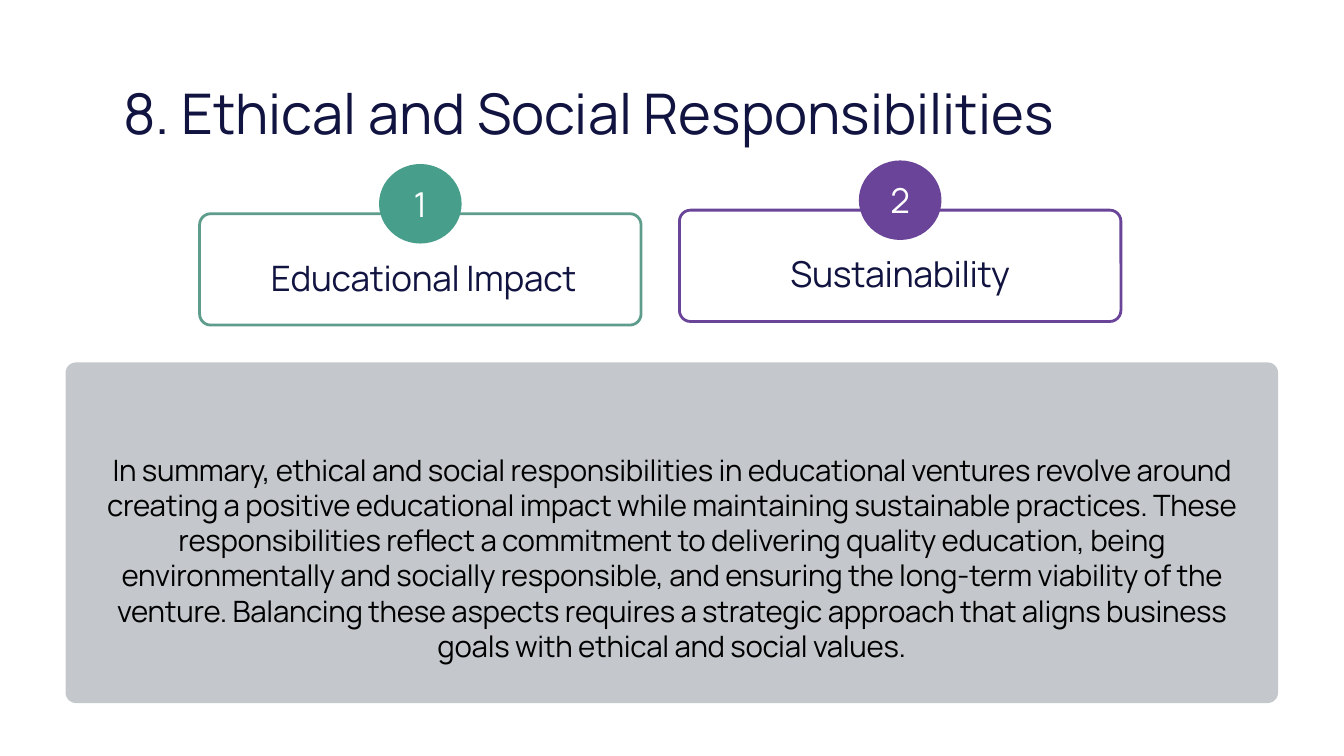
from dataclasses import dataclass

from pptx import Presentation
from pptx.dml.color import RGBColor
from pptx.enum.shapes import MSO_SHAPE
from pptx.enum.text import MSO_ANCHOR, MSO_AUTO_SIZE, PP_ALIGN
from pptx.util import Pt


@dataclass(frozen=True)
class Theme:
    font: str = "Manrope"
    ink: str = "111340"
    black: str = "000000"
    white: str = "FFFFFF"
    panel: str = "C4C8CD"
    green: str = "479E8B"
    green_line: str = "5E9C8C"
    purple: str = "694498"
    title_size: int = 80
    number_size: int = 49
    body_size: int = 42
    line_width: int = 4


class SlideBuilder:
    def __init__(self, page, theme):
        self.page = page
        self.theme = theme

    def shape(self, kind, left, top, width, height, fill=None, line=None, corner=None):
        shape = self.page.shapes.add_shape(kind, Pt(left), Pt(top), Pt(width), Pt(height))
        shape.shadow.inherit = False
        if corner is not None:
            shape.adjustments[0] = corner
        if fill:
            shape.fill.solid()
            shape.fill.fore_color.rgb = RGBColor.from_string(fill)
        else:
            shape.fill.background()
        if line:
            shape.line.color.rgb = RGBColor.from_string(line)
            shape.line.width = Pt(self.theme.line_width)
        else:
            shape.line.fill.background()

    def text(self, words, left, top, width, height, size, color,
             align=PP_ALIGN.CENTER, anchor=MSO_ANCHOR.BOTTOM, spacing=-0.5):
        box = self.page.shapes.add_textbox(Pt(left), Pt(top), Pt(width), Pt(height))
        frame = box.text_frame
        frame.word_wrap = True
        frame.auto_size = MSO_AUTO_SIZE.SHAPE_TO_FIT_TEXT
        frame.vertical_anchor = anchor
        frame.margin_left = frame.margin_right = Pt(3.6)
        frame.margin_top = frame.margin_bottom = Pt(3.6)
        paragraph = frame.paragraphs[0]
        paragraph.alignment = align
        paragraph.font.name = self.theme.font
        paragraph.font.size = Pt(size)
        paragraph.font.color.rgb = RGBColor.from_string(color)
        span = paragraph.add_run()
        span.text = words
        # Letter spacing is stored in hundredths of a point
        span._r.get_or_add_rPr().set("spc", str(round(spacing * 100)))

    def card(self, number, label, left, top, line, badge, label_width, label_size, spacing):
        width, height = 630.7, 159.1
        center = left + width / 2
        self.shape(MSO_SHAPE.ROUNDED_RECTANGLE, left, top, width, height,
                   line=line, corner=0.1)
        # Numbered badge on the top edge
        self.shape(MSO_SHAPE.OVAL, center - 59, top - 71, 118, 113.6, fill=badge)
        self.text(number, center - 50.4, top - 52, 100.8, 75.6,
                  self.theme.number_size, self.theme.white, anchor=MSO_ANCHOR.MIDDLE)
        self.text(label, center - label_width / 2, top + 46, label_width, 78.8,
                  label_size, self.theme.ink, spacing=spacing)


def main():
    theme = Theme()
    deck = Presentation()
    deck.slide_width, deck.slide_height = Pt(1920), Pt(1080)
    page = deck.slides.add_slide(deck.slide_layouts[6])
    builder = SlideBuilder(page, theme)

    # Summary panel
    builder.shape(MSO_SHAPE.ROUNDED_RECTANGLE, 93.6, 517.7, 1732.3, 486.7,
                  fill=theme.panel, corner=0.031)

    # Title
    builder.text(" 8. Ethical and Social Responsibilities", 156.2, 92.2, 1777.7, 119.5,
                 theme.title_size, theme.ink, align=PP_ALIGN.LEFT, spacing=0.1)

    # Numbered cards
    builder.card("1", " Educational Impact", 285.1, 305.3,
                 theme.green_line, theme.green, 610.6, 50, -0.4)
    builder.card("2", "Sustainability", 970.6, 300.2,
                 theme.purple, theme.purple, 702.7, 51, -0.5)

    # Summary text
    builder.text(
        "In summary, ethical and social responsibilities in educational ventures revolve "
        "around creating a positive educational impact while maintaining sustainable "
        "practices. These responsibilities reflect a commitment to delivering quality "
        "education, being environmentally and socially responsible, and ensuring the "
        "long-term viability of the venture. Balancing these aspects requires a strategic "
        "approach that aligns business goals with ethical and social values.",
        135.4, 570.2, 1648.8, 380.9, theme.body_size, theme.black, spacing=-0.4)

    deck.save("out.pptx")


if __name__ == "__main__":
    main()
